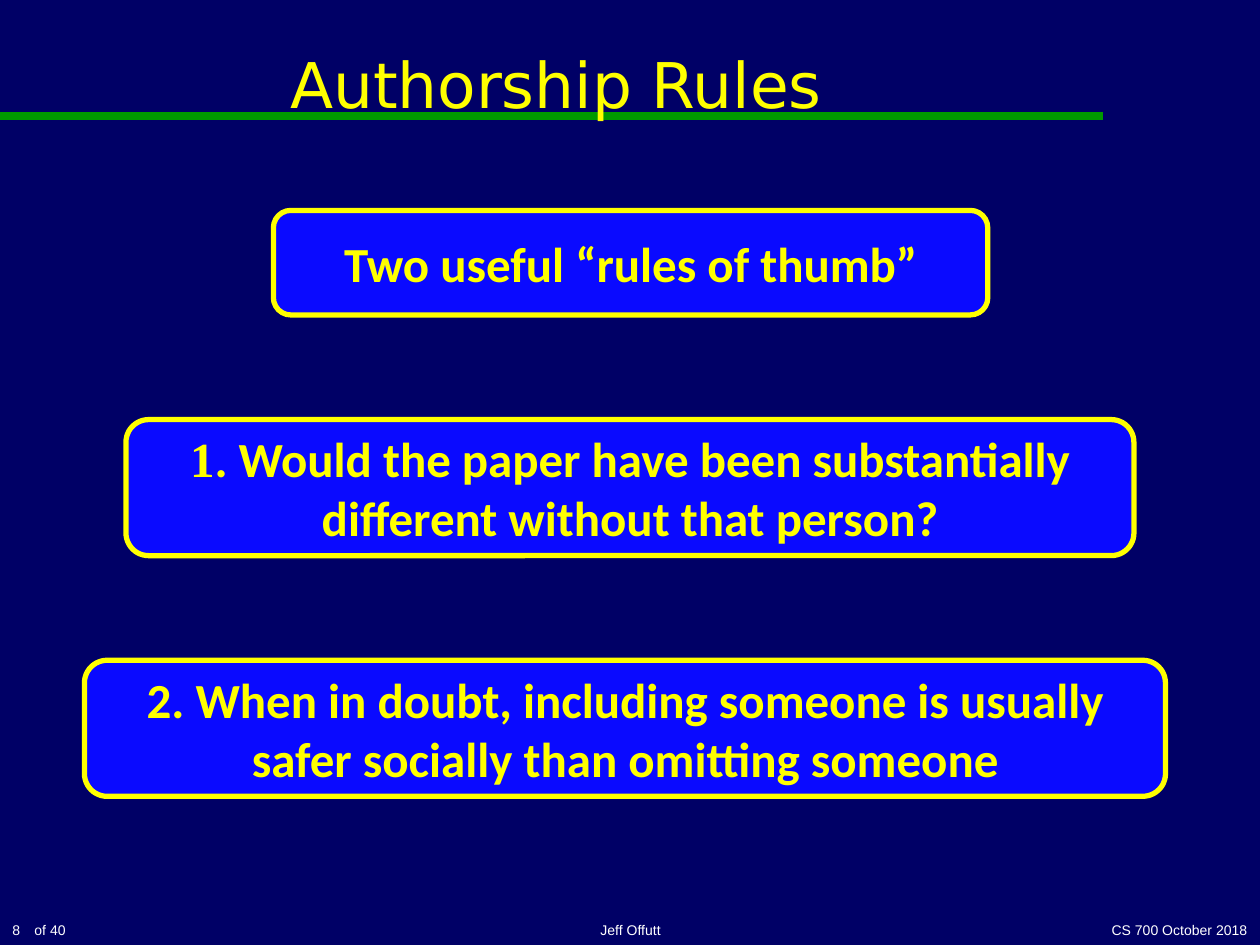
from lxml import etree
from pptx import Presentation
from pptx.dml.color import RGBColor
from pptx.enum.shapes import MSO_CONNECTOR, MSO_SHAPE
from pptx.enum.text import MSO_ANCHOR, PP_ALIGN
from pptx.oxml.ns import qn
from pptx.util import Inches, Pt

LEFT, CENTER, RIGHT = PP_ALIGN.LEFT, PP_ALIGN.CENTER, PP_ALIGN.RIGHT
MIDDLE, BOTTOM = MSO_ANCHOR.MIDDLE, MSO_ANCHOR.BOTTOM
ROUNDED = MSO_SHAPE.ROUNDED_RECTANGLE
STRAIGHT = MSO_CONNECTOR.STRAIGHT
TITLE_ONLY = 5


def color(hex_string):
    return RGBColor.from_string(hex_string)


class SlideBuilder:
    background = "000066"
    accent = "FFFF00"
    box_fill = "0A0AFF"
    rule_color = "009900"
    footer_color = "FFFFFF"
    title_font = "DejaVu Sans"
    box_font = "Calibri"
    footer_font = "Arial"

    def __init__(self, presentation):
        self.slide = presentation.slides.add_slide(
            presentation.slide_layouts[TITLE_ONLY])
        fill = self.slide.background.fill
        fill.solid()
        fill.fore_color.rgb = color(self.background)

    def format_text(self, shape, anchor, alignment, font_name, size,
                    font_color, bold=False, wrap=True):
        frame = shape.text_frame
        frame.word_wrap = wrap
        frame.vertical_anchor = anchor
        paragraph = frame.paragraphs[0]
        paragraph.alignment = alignment
        font = paragraph.font
        font.name = font_name
        font.size = Pt(size)
        font.bold = bold
        font.color.rgb = color(font_color)

    def title(self, text, left, top, width, height):
        title = self.slide.shapes.title
        title.left, title.top = Inches(left), Inches(top)
        title.width, title.height = Inches(width), Inches(height)
        title.text_frame.text = text
        self.format_text(title, MIDDLE, CENTER, self.title_font, 36, self.accent)

    def rule(self, left, right, y):
        """Draw the horizontal line that passes behind the title."""
        line = self.slide.shapes.add_connector(
            STRAIGHT, Inches(left), Inches(y), Inches(right), Inches(y))
        line.line.color.rgb = color(self.rule_color)
        line.line.width = Pt(4.5)
        etree.SubElement(line._element.spPr, qn("a:effectLst"))
        self.slide.shapes.title._element.addprevious(line._element)

    def box(self, text, left, top, width, height, number="", number_font=None):
        """Add a rounded box; number is a lead-in set in number_font."""
        shape = self.slide.shapes.add_shape(
            ROUNDED, Inches(left), Inches(top), Inches(width), Inches(height))
        shape.shadow.inherit = False
        shape.fill.solid()
        shape.fill.fore_color.rgb = color(self.box_fill)
        shape.line.color.rgb = color(self.accent)
        shape.line.width = Pt(3)
        paragraph = shape.text_frame.paragraphs[0]
        if number:
            run = paragraph.add_run()
            run.text = number
            run.font.name = number_font
        paragraph.add_run().text = text
        self.format_text(shape, MIDDLE, CENTER, self.box_font, 28,
                         self.accent, bold=True)

    def footer(self, text, left, top, width, height, alignment, wrap=True):
        shape = self.slide.shapes.add_textbox(
            Inches(left), Inches(top), Inches(width), Inches(height))
        shape.text_frame.text = text
        self.format_text(shape, BOTTOM, alignment, self.footer_font, 8,
                         self.footer_color, wrap=wrap)


def main():
    presentation = Presentation()
    presentation.slide_width = Inches(10)
    presentation.slide_height = Inches(7.5)
    builder = SlideBuilder(presentation)

    builder.title("Authorship Rules", 0.08, 0, 8.67, 1.33)
    builder.rule(0, 8.75, 0.92)

    builder.box("Two useful “rules of thumb”", 2.17, 1.67, 5.67, 0.83)
    builder.box(". Would the paper have been substantially different "
                "without that person?", 1, 3.33, 8, 1.08,
                number="1", number_font="Times New Roman")
    builder.box("2. When in doubt, including someone is usually safer "
                "socially than omitting someone", 0.67, 5.24, 8.58, 1.08)

    builder.footer("8", 0, 7.17, 1.75, 0.33, LEFT)
    builder.footer("of 40", 0.17, 7.26, 0.45, 0.24, RIGHT, wrap=False)
    builder.footer("Jeff Offutt", 3.42, 7.17, 3.17, 0.33, CENTER)
    builder.footer("CS 700 October 2018", 7.92, 7.17, 2.08, 0.33, RIGHT)

    presentation.save("out.pptx")


if __name__ == "__main__":
    main()
